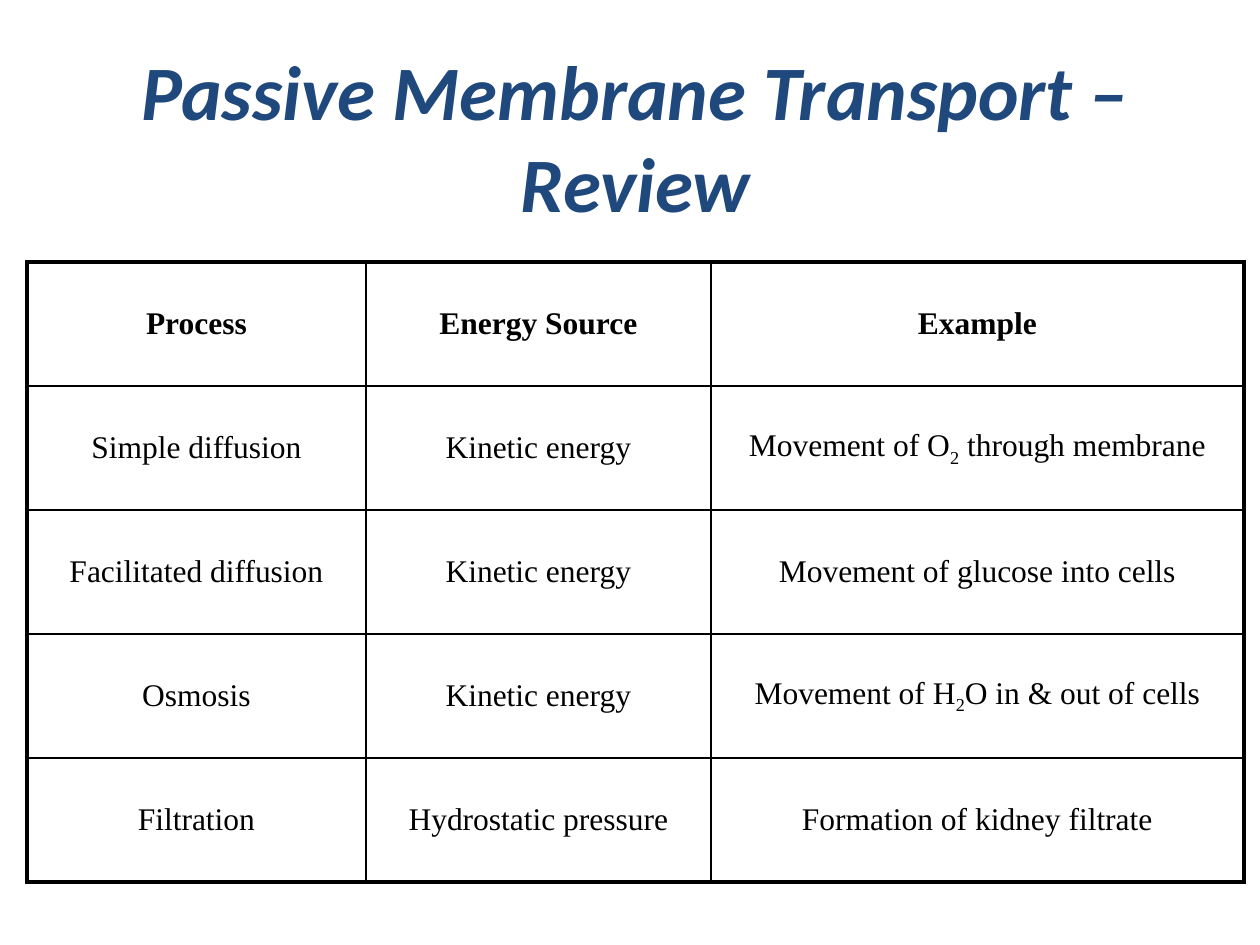
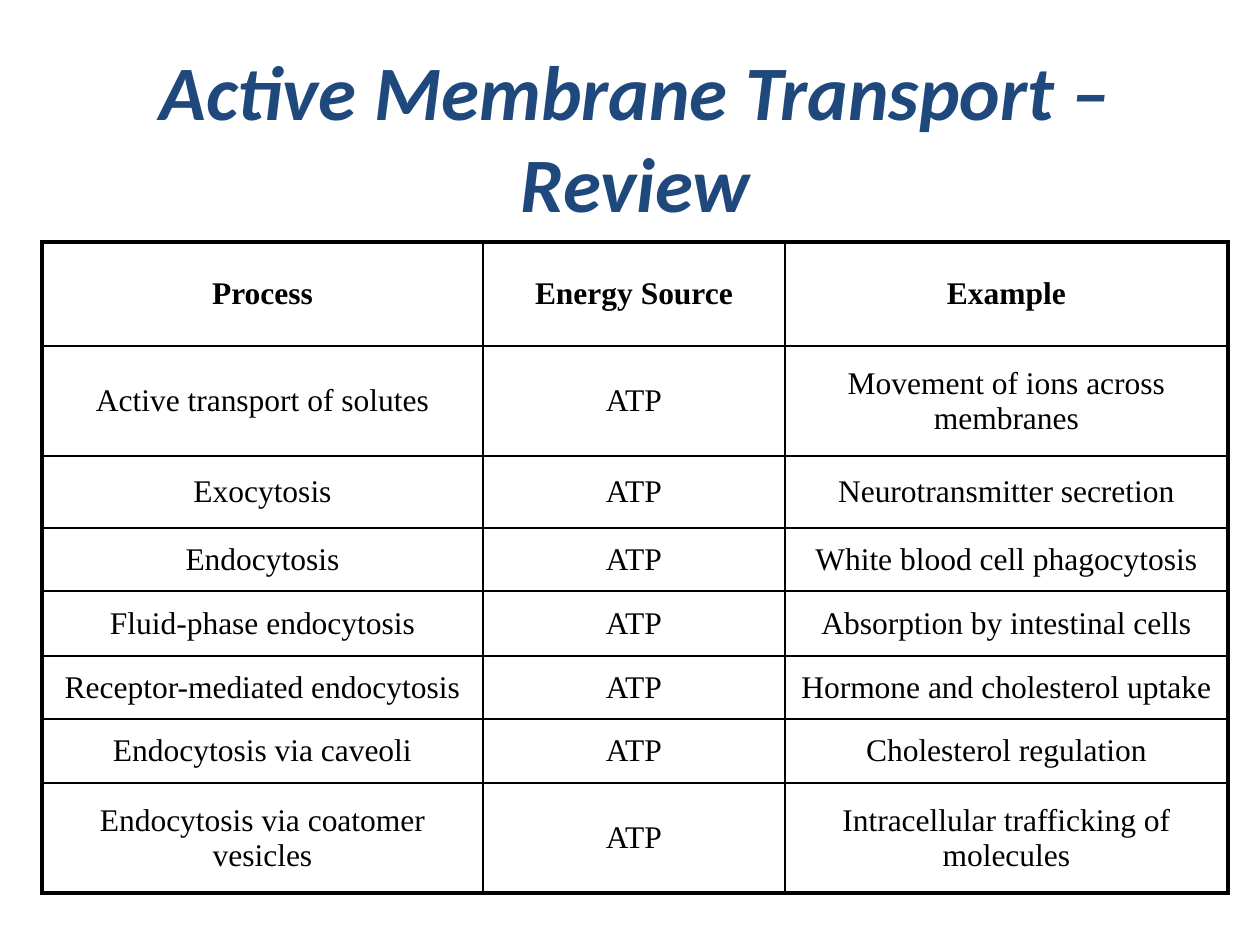
import dataclasses

import lxml.etree
import pptx
import pptx.dml.color
import pptx.enum.text
import pptx.oxml.ns
import pptx.util

PX = 914400 / 126
TITLE_ONLY_LAYOUT = 5


def px(length):
    return pptx.util.Emu(round(length * PX))


@dataclasses.dataclass(frozen=True)
class Theme:
    title_color: str = "1F497D"
    ink: str = "000000"
    title_font: str = "Calibri"
    table_font: str = "Times New Roman"
    title_size: int = 44
    table_size: int = 18
    outer_border: float = 2.25
    inner_border: float = 1


class Deck:
    def __init__(self, theme):
        self.theme = theme
        self.presentation = pptx.Presentation()
        self.presentation.slide_width = px(1260)
        self.presentation.slide_height = px(945)
        self.slide = None

    def add_slide(self, heading):
        layout = self.presentation.slide_layouts[TITLE_ONLY_LAYOUT]
        self.slide = self.presentation.slides.add_slide(layout)
        self.title(heading)

    def style(self, paragraph, font_name, size, color, bold, italic=False):
        paragraph.alignment = pptx.enum.text.PP_ALIGN.CENTER
        font = paragraph.font
        font.name, font.size = font_name, pptx.util.Pt(size)
        font.bold, font.italic = bold, italic
        font.color.rgb = pptx.dml.color.RGBColor.from_string(color)

    def title(self, heading):
        title = self.slide.shapes.title
        title.left, title.top, title.width, title.height = map(px, (42, 37, 1187, 84))
        frame = title.text_frame
        frame.text = heading
        frame.word_wrap = True
        frame.auto_size = pptx.enum.text.MSO_AUTO_SIZE.NONE
        frame.vertical_anchor = pptx.enum.text.MSO_ANCHOR.TOP
        self.style(frame.paragraphs[0], self.theme.title_font, self.theme.title_size,
                   self.theme.title_color, bold=True, italic=True)

    def table(self, left, top, column_widths, row_heights, rows):
        table = self.slide.shapes.add_table(
            len(rows), len(column_widths), px(left), px(top),
            px(sum(column_widths)), px(sum(row_heights))).table
        table.first_row = table.horz_banding = False
        for column, width in zip(table.columns, column_widths):
            column.width = px(width)
        for row, height in zip(table.rows, row_heights):
            row.height = px(height)

        last_row, last_column = len(rows) - 1, len(column_widths) - 1
        for r, entries in enumerate(rows):
            for c, entry in enumerate(entries):
                cell = table.cell(r, c)
                self.borders(cell, L=c == 0, R=c == last_column, T=r == 0, B=r == last_row)
                cell.fill.background()
                cell.vertical_anchor = pptx.enum.text.MSO_ANCHOR.MIDDLE
                self.cell_text(cell, entry, bold=r == 0)

    def cell_text(self, cell, entry, bold):
        """Write the entry, lowering whatever stands between tildes."""
        paragraph = cell.text_frame.paragraphs[0]
        self.style(paragraph, self.theme.table_font, self.theme.table_size,
                   self.theme.ink, bold)
        for position, part in enumerate(entry.split("~")):
            run = paragraph.add_run()
            run.text = part
            if position % 2:
                run._r.get_or_add_rPr().set("baseline", "-25000")

    def borders(self, cell, **is_outer):
        """Draw each side, given as L, R, T, B with True on the table's edge."""
        qn = pptx.oxml.ns.qn
        properties = cell._tc.get_or_add_tcPr()
        for side, outer in is_outer.items():
            width = self.theme.outer_border if outer else self.theme.inner_border
            line = lxml.etree.SubElement(properties, qn(f"a:ln{side}"),
                                         w=str(pptx.util.Pt(width)))
            fill = lxml.etree.SubElement(line, qn("a:solidFill"))
            lxml.etree.SubElement(fill, qn("a:srgbClr"), val=self.theme.ink)


HEADER = ("Process", "Energy Source", "Example")

PASSIVE_PROCESSES = [
    ("Simple diffusion", "Kinetic energy", "Movement of O~2~ through membrane"),
    ("Facilitated diffusion", "Kinetic energy", "Movement of glucose into cells"),
    ("Osmosis", "Kinetic energy", "Movement of H~2~O in & out of cells"),
    ("Filtration", "Hydrostatic pressure", "Formation of kidney filtrate"),
]

ACTIVE_EXAMPLES = {
    "Active transport of solutes": "Movement of ions across membranes",
    "Exocytosis": "Neurotransmitter secretion",
    "Endocytosis": "White blood cell phagocytosis",
    "Fluid-phase endocytosis": "Absorption by intestinal cells",
    "Receptor-mediated endocytosis": "Hormone and cholesterol uptake",
    "Endocytosis via caveoli": "Cholesterol regulation",
    "Endocytosis via coatomer vesicles": "Intracellular trafficking of molecules",
}


def main():
    deck = Deck(Theme())

    deck.add_slide("Passive Membrane Transport – Review")
    passive_rows = [HEADER, *PASSIVE_PROCESSES]
    deck.table(27, 262, (339, 345, 533), [124] * len(passive_rows), passive_rows)

    deck.add_slide("Active Membrane Transport – Review")
    active_rows = [HEADER] + [(process, "ATP", example)
                              for process, example in ACTIVE_EXAMPLES.items()]
    deck.table(42, 242, (441, 302, 443), (104, 110, 72, 63, 65, 63, 64, 110), active_rows)

    deck.presentation.save("out.pptx")


if __name__ == "__main__":
    main()
